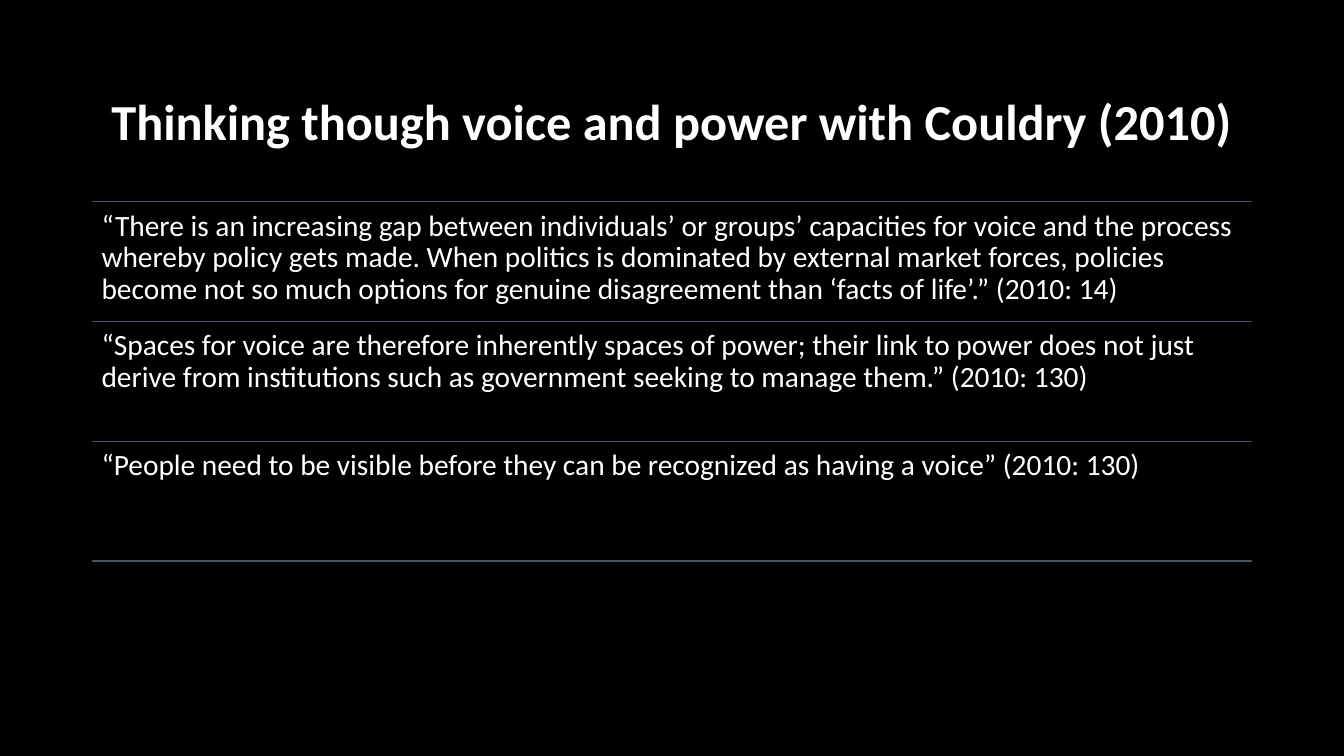
from pptx import Presentation
from pptx.dml.color import RGBColor
from pptx.enum.shapes import MSO_CONNECTOR
from pptx.enum.text import MSO_ANCHOR, MSO_AUTO_SIZE, PP_ALIGN
from pptx.oxml.ns import qn
from pptx.util import Cm, Pt
from lxml import etree

BLACK = RGBColor(0x00, 0x00, 0x00)
WHITE = RGBColor(0xFF, 0xFF, 0xFF)
SLATE = RGBColor(0x44, 0x54, 0x6A)

LEFT, WIDTH = 2.33, 29.21
LIST_TOP, ROW_HEIGHT = 5.08, 3.02

QUOTES = [
    "“There is an increasing gap between individuals’ or groups’ capacities for voice "
    "and the process whereby policy gets made. When politics is dominated by external "
    "market forces, policies become not so much options for genuine disagreement than "
    "‘facts of life’.” (2010: 14)",
    "“Spaces for voice are therefore inherently spaces of power; their link to power "
    "does not just derive from institutions such as government seeking to manage "
    "them.” (2010: 130)",
    "“People need to be visible before they can be recognized as having a voice” "
    "(2010: 130)",
]


class QuoteSlide:
    font = "Calibri"
    inset = Cm(0.23)

    def __init__(self, prs):
        self.slide = prs.slides.add_slide(prs.slide_layouts[5])
        fill = self.slide.background.fill
        fill.solid()
        fill.fore_color.rgb = BLACK

    def set_text(self, tf, text, size, bold=False, align=PP_ALIGN.LEFT):
        tf.word_wrap = True
        tf.auto_size = MSO_AUTO_SIZE.NONE
        p = tf.paragraphs[0]
        p.text = text
        p.alignment = align
        p.line_spacing = 0.9
        p.font.name = self.font
        p.font.size = Pt(size)
        p.font.bold = bold
        p.font.color.rgb = WHITE

    def title(self, text):
        sp = self.slide.shapes.title
        sp.left, sp.top, sp.width, sp.height = Cm(LEFT), Cm(1.55), Cm(WIDTH), Cm(3.15)
        sp.text_frame.vertical_anchor = MSO_ANCHOR.MIDDLE
        self.set_text(sp.text_frame, text, 36, True, PP_ALIGN.CENTER)

    def rule(self, top):
        line = self.slide.shapes.add_connector(
            MSO_CONNECTOR.STRAIGHT, Cm(LEFT), Cm(top), Cm(LEFT + WIDTH), Cm(top))
        line.line.color.rgb = SLATE
        line.line.width = Pt(1)
        etree.SubElement(line._element.spPr, qn("a:effectLst"))

    def quote(self, text, top):
        sp = self.slide.shapes.add_textbox(Cm(LEFT), Cm(top), Cm(WIDTH), Cm(ROW_HEIGHT))
        tf = sp.text_frame
        tf.margin_left = tf.margin_right = tf.margin_top = tf.margin_bottom = self.inset
        tf.vertical_anchor = MSO_ANCHOR.TOP
        self.set_text(tf, text, 21)


def main():
    prs = Presentation()
    prs.slide_width, prs.slide_height = Cm(33.87), Cm(19.05)
    s = QuoteSlide(prs)
    s.title("Thinking though voice and power with Couldry (2010)")
    for i, text in enumerate(QUOTES):
        top = LIST_TOP + i * ROW_HEIGHT
        s.rule(top)
        s.quote(text, top)
    s.rule(LIST_TOP + len(QUOTES) * ROW_HEIGHT)
    prs.save("out.pptx")


if __name__ == "__main__":
    main()
